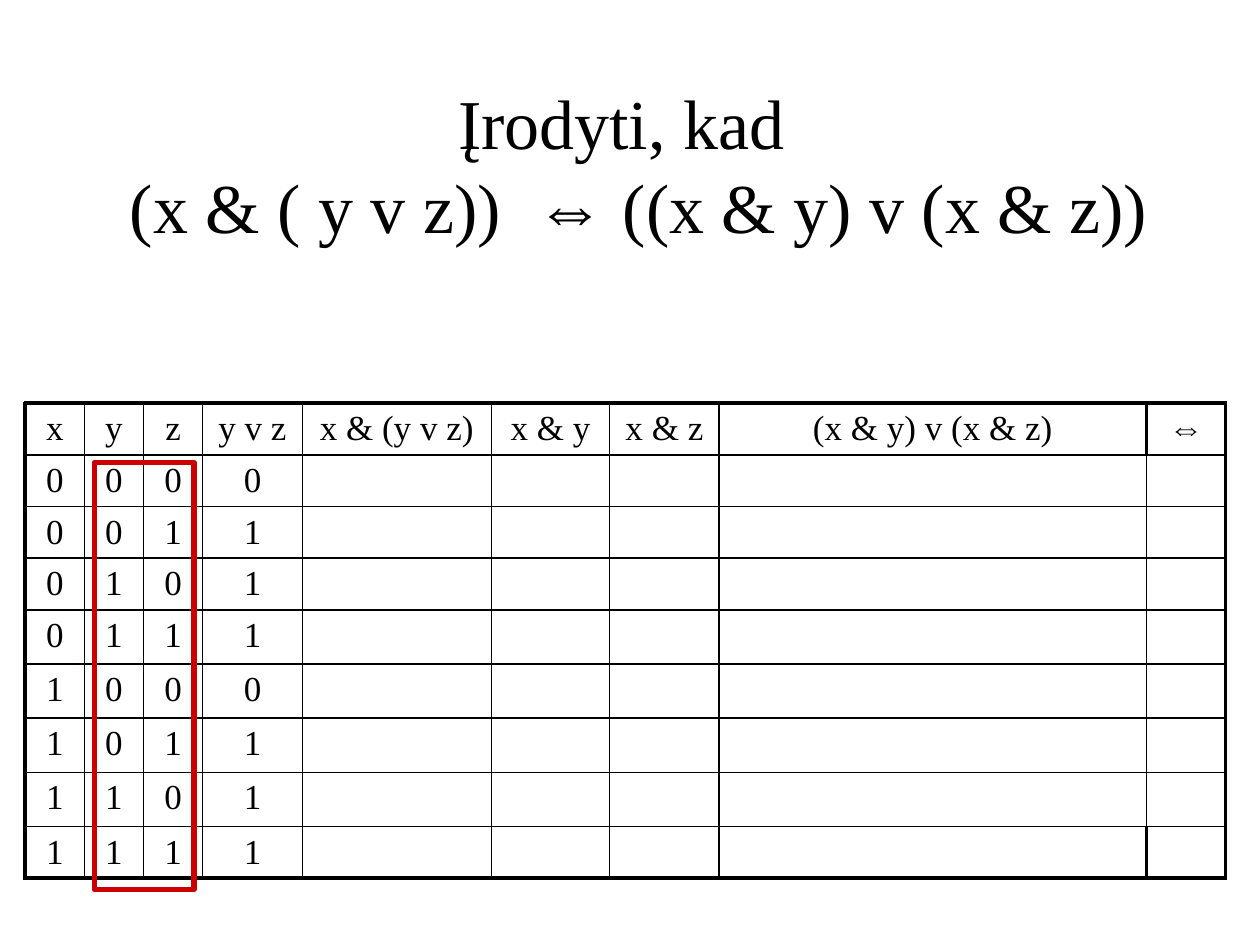
from itertools import product

from lxml import etree
from pptx import Presentation
from pptx import util as u
from pptx.dml import color
from pptx.enum import shapes, text
from pptx.oxml import ns

FONT = "Times New Roman"
BLACK, RED = "000000", "CC0000"
THIN, THICK = 1, 2.25
COLUMNS = [0.47, 0.47, 0.47, 0.79, 1.5, 0.94, 0.87, 3.39, 0.63]
ROWS = [0.41] * 4 + [0.43] * 4 + [0.41]
HEADERS = ["x", "y", "z", "y v z", "x & (y v z)", "x & y", "x & z",
           "(x & y) v (x & z)", "⇔"]


def rgb(value):
    return color.RGBColor.from_string(value)


def inches(box):
    return [u.Inches(length) for length in box]


def style(para, size, bold=False):
    para.alignment = text.PP_ALIGN.CENTER
    for span in para.runs:
        span.font.name = FONT
        span.font.size = u.Pt(size)
        span.font.bold = bold
        span.font.color.rgb = rgb(BLACK)


def add_child(parent, tag, **attributes):
    return etree.SubElement(parent, ns.qn(tag), attributes)


def set_borders(cell, widths):
    properties = cell._tc.get_or_add_tcPr()
    for side, width in widths.items():
        line = add_child(properties, f"a:ln{side}", w=str(u.Pt(width)))
        add_child(add_child(line, "a:solidFill"), "a:srgbClr", val=BLACK)


def truth_rows():
    yield HEADERS
    for x, y, z in product((0, 1), repeat=3):
        yield [str(value) for value in (x, y, z, y | z)] + [""] * 5


def place_title(page, box):
    title = page.shapes.title
    title.left, title.top, title.width, title.height = inches(box)
    frame = title.text_frame
    frame.text = "Įrodyti, kad \v (x & ( y v z))  ⇔ ((x & y) v (x & z))"
    frame.auto_size = text.MSO_AUTO_SIZE.NONE
    frame.vertical_anchor = text.MSO_ANCHOR.MIDDLE
    style(frame.paragraphs[0], 40)


def place_truth_table(page, box):
    table = page.shapes.add_table(len(ROWS), len(COLUMNS), *inches(box)).table
    table.first_row = table.horz_banding = False
    for column, width in zip(table.columns, COLUMNS):
        column.width = u.Inches(width)
    for row, height in zip(table.rows, ROWS):
        row.height = u.Inches(height)
    last_row, last_column = len(ROWS) - 1, len(COLUMNS) - 1
    for r, values in enumerate(truth_rows()):
        outer_row = r in (0, last_row)
        for c, value in enumerate(values):
            cell = table.cell(r, c)
            thick = {
                "L": c == 0 or (c == last_column and outer_row),
                "R": c == last_column or (c == last_column - 1 and outer_row),
                "T": r == 0,
                "B": r == last_row,
            }
            set_borders(cell, {side: THICK if heavy else THIN
                               for side, heavy in thick.items()})
            cell.fill.background()
            if value:
                cell.text_frame.text = value
                para = cell.text_frame.paragraphs[0]
                style(para, 20, bold=value == "⇔")
                before = add_child(para._p.get_or_add_pPr(), "a:spcBef")
                add_child(before, "a:spcPct", val="20000")


def place_highlight(page, table_box):
    left, top = table_box[:2]
    box = (left + COLUMNS[0] + 0.08, top + ROWS[0] + 0.06, 0.79, 3.39)
    frame = page.shapes.add_shape(shapes.MSO_SHAPE.RECTANGLE, *inches(box))
    frame.shadow.inherit = False
    frame.fill.background()
    frame.line.color.rgb = rgb(RED)
    frame.line.width = u.Pt(3)


def main():
    deck = Presentation()
    deck.slide_width, deck.slide_height = inches((10, 7.5))
    page = deck.slides.add_slide(deck.slide_layouts[5])
    table_box = (0.2, 3.2, sum(COLUMNS), sum(ROWS))
    place_title(page, (0.75, 0.67, 8.5, 1.25))
    place_truth_table(page, table_box)
    place_highlight(page, table_box)
    deck.save("out.pptx")


if __name__ == "__main__":
    main()
